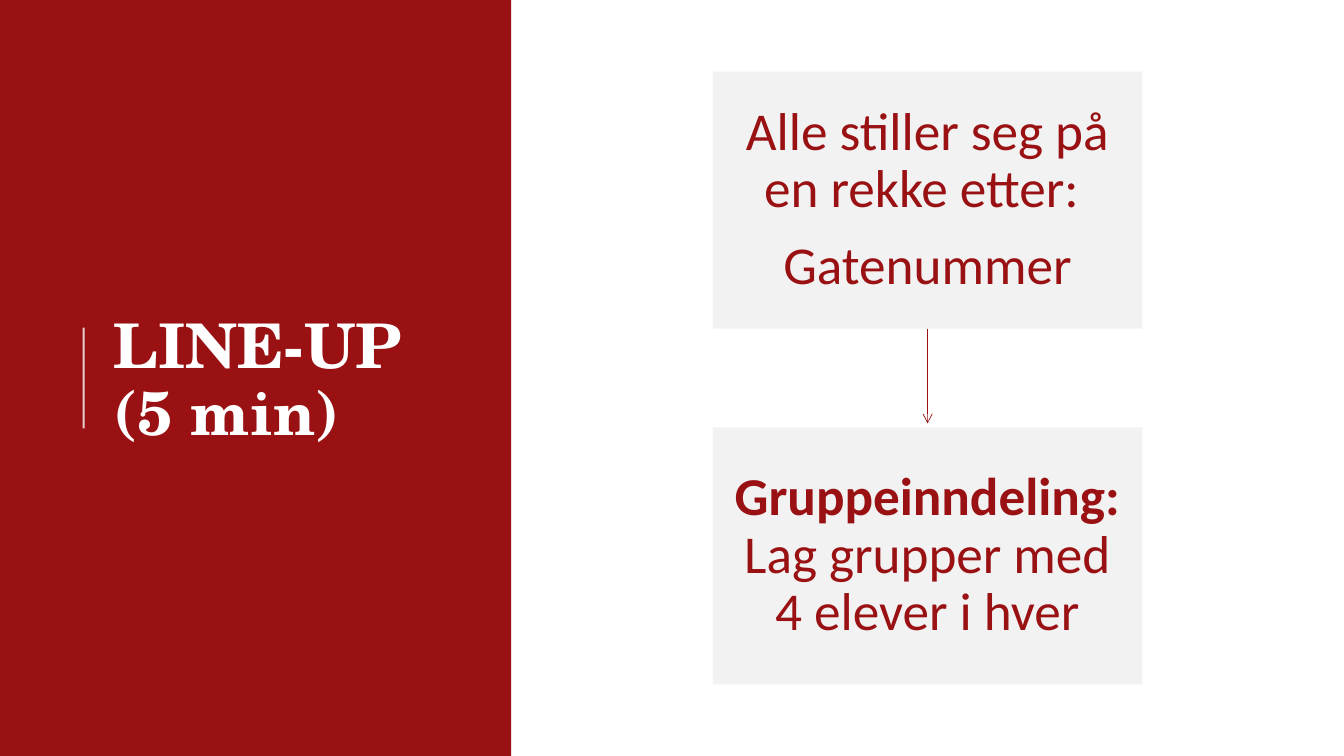
from lxml.etree import SubElement
from pptx import Presentation
from pptx.dml.color import RGBColor
from pptx.enum.shapes import MSO_CONNECTOR, MSO_SHAPE
from pptx.enum.text import MSO_ANCHOR, PP_ALIGN
from pptx.oxml.ns import qn
from pptx.util import Inches, Pt

RED = "9A1113"
WHITE = "FFFFFF"
GREY = "F2F2F2"
STEP_LEFT, STEP_WIDTH, STEP_HEIGHT = 7.07, 4.26, 2.55
STEP_TOPS = (0.71, 4.24)


def color(value):
    """Turn a hex string into a colour."""
    return RGBColor.from_string(value)


def format_font(font, name, size, value, bold):
    """Set the typeface, size, colour and weight of a font."""
    font.name = name
    font.size = Pt(size)
    font.color.rgb = color(value)
    font.bold = bold


def add_rectangle(page, left, top, width, height, fill):
    """Add a flat filled rectangle without an outline."""
    box = page.shapes.add_shape(MSO_SHAPE.RECTANGLE, Inches(left), Inches(top),
                                Inches(width), Inches(height))
    box.shadow.inherit = False
    box.fill.solid()
    box.fill.fore_color.rgb = color(fill)
    box.line.fill.background()
    return box


def add_line(page, x, top, bottom, value, width):
    """Add a vertical line from top to bottom."""
    line = page.shapes.add_connector(MSO_CONNECTOR.STRAIGHT, Inches(x), Inches(top),
                                     Inches(x), Inches(bottom))
    line.line.color.rgb = color(value)
    line.line.width = Pt(width)
    SubElement(line.element.spPr, qn("a:effectLst"))
    return line


def add_step(page, top, paragraphs):
    """Add a grey step box whose paragraphs are lists of (text, bold) spans."""
    box = add_rectangle(page, STEP_LEFT, top, STEP_WIDTH, STEP_HEIGHT, GREY)
    frame = box.text_frame
    frame.word_wrap = True
    frame.vertical_anchor = MSO_ANCHOR.MIDDLE
    frame.margin_left = frame.margin_right = Inches(0.21)
    frame.margin_top = frame.margin_bottom = Inches(0.22)
    for index, spans in enumerate(paragraphs):
        para = frame.add_paragraph() if index else frame.paragraphs[0]
        para.alignment = PP_ALIGN.CENTER
        para.line_spacing = 0.9
        para.space_after = Pt(13.3)
        for text, bold in spans:
            span = para.add_run()
            span.text = text
            format_font(span.font, "Calibri", 38, RED, bold)


def set_title(page, text):
    """Place and format the title in front of the red panel."""
    title = page.shapes.title
    page.shapes.element.append(title.element)
    title.left, title.top = Inches(1.03), Inches(0.78)
    title.width, title.height = Inches(3.69), Inches(6.02)
    frame = title.text_frame
    frame.text = text
    frame.word_wrap = True
    frame.vertical_anchor = MSO_ANCHOR.MIDDLE
    para = frame.paragraphs[0]
    para.alignment = PP_ALIGN.LEFT
    para.line_spacing = 0.9
    for span in para.runs:
        format_font(span.font, "TeX Gyre Schola", 44, WHITE, True)


def main():
    """Build the slide and save it."""
    deck = Presentation()
    deck.slide_width, deck.slide_height = Inches(13.33), Inches(7.5)
    page = deck.slides.add_slide(deck.slide_layouts[5])

    add_rectangle(page, 0, 0, 5.07, 7.5, RED)
    accent = add_line(page, 0.83, 3.25, 4.25, WHITE, 1.5)
    accent_color = accent.line.fill.fore_color
    accent_color.rgb = color(WHITE)
    fill = accent.element.spPr.find(".//" + qn("a:srgbClr"))
    SubElement(fill, qn("a:alpha"), val="80000")
    set_title(page, "LINE-UP\v(5 min)")

    arrow = add_line(page, STEP_LEFT + STEP_WIDTH / 2, STEP_TOPS[0] + STEP_HEIGHT, 4.2, RED, 0.5)
    SubElement(arrow.line._get_or_add_ln(), qn("a:tailEnd"), type="arrow")
    steps = (
        [[("Alle stiller seg på en rekke etter: ", False)], [("Gatenummer", False)]],
        [[("Gruppeinndeling:", True), (" Lag grupper med 4 elever i hver", False)]],
    )
    for top, paragraphs in zip(STEP_TOPS, steps):
        add_step(page, top, paragraphs)

    deck.save("out.pptx")


if __name__ == "__main__":
    main()
